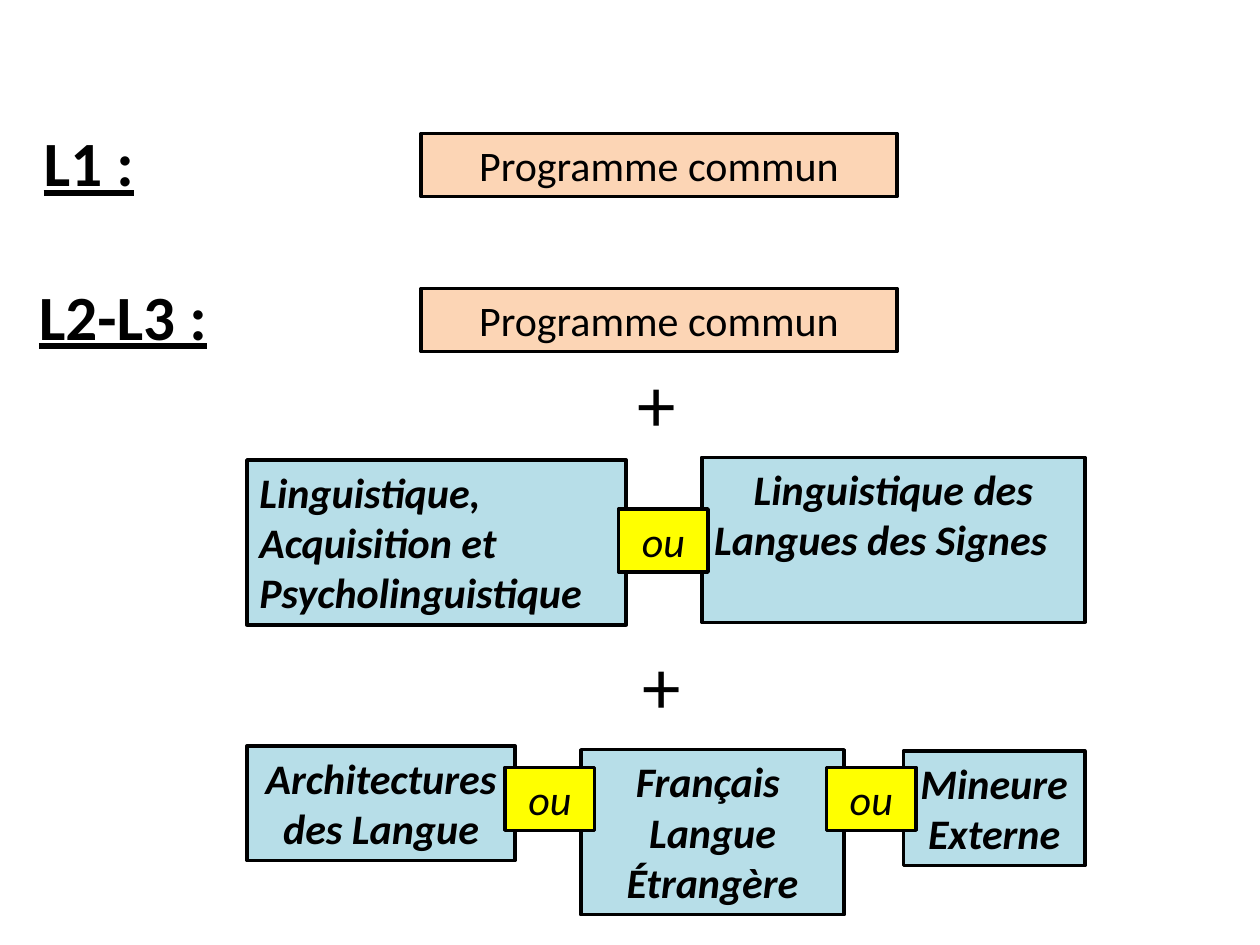
from pptx import Presentation
from pptx.dml.color import RGBColor
from pptx.enum.shapes import MSO_SHAPE as Shape
from pptx.enum.text import MSO_ANCHOR as Anchor, MSO_AUTO_SIZE as AutoSize, PP_ALIGN as Align
from pptx.util import Inches, Pt

PEACH, BLUE, YELLOW, WHITE, BLACK = "FCD5B5", "B7DEE8", "FFFF00", "FFFFFF", "000000"


def colour(value):
    return RGBColor.from_string(value)


class Diagram:
    font = "Calibri"
    body_size = 24
    plus_size = 44
    label_size = 36
    line_width = 2

    def __init__(self, slide):
        self.slide = slide

    def set_text(self, shape, text, size, align=Align.CENTER, bold=False, italic=False, underline=False):
        frame = shape.text_frame
        frame.word_wrap = True
        frame.auto_size = AutoSize.SHAPE_TO_FIT_TEXT
        frame.vertical_anchor = Anchor.TOP
        frame.text = text
        for para in frame.paragraphs:
            para.alignment = align
            for span in para.runs:
                font = span.font
                font.name, font.size = self.font, Pt(size)
                font.bold, font.italic, font.underline = bold, italic, underline
                font.color.rgb = colour(BLACK)

    def block(self, left, top, width, height, fill, outlined=True):
        box = self.slide.shapes.add_shape(
            Shape.RECTANGLE, Inches(left), Inches(top), Inches(width), Inches(height))
        box.shadow.inherit = False
        box.fill.solid()
        box.fill.fore_color.rgb = colour(fill)
        if outlined:
            box.line.color.rgb = colour(BLACK)
            box.line.width = Pt(self.line_width)
        else:
            box.line.fill.background()
        return box

    def common(self, top):
        """Box for the programme shared by all students."""
        self.set_text(self.block(3.34, top, 3.78, 0.5, PEACH), "Programme commun", self.body_size)

    def course(self, left, top, width, height, text, align=Align.CENTER):
        self.set_text(self.block(left, top, width, height, BLUE), text, self.body_size,
                      align, bold=True, italic=True)

    def choice(self, left, top):
        """Yellow "ou" tag between two courses."""
        self.set_text(self.block(left, top, 0.71, 0.5, YELLOW), "ou", self.body_size, italic=True)

    def plus(self, left, top):
        self.set_text(self.block(left, top, 0.71, 0.84, WHITE, outlined=False), "+", self.plus_size)

    def level(self, left, top, width, text):
        """Underlined year label in the left margin."""
        box = self.slide.shapes.add_textbox(
            Inches(left), Inches(top), Inches(width), Inches(0.71))
        self.set_text(box, text, self.label_size, bold=True, underline=True)


def main():
    deck = Presentation()
    deck.slide_width, deck.slide_height = Inches(10), Inches(7.5)
    page = Diagram(deck.slides.add_slide(deck.slide_layouts[6]))

    page.level(0.17, 0.93, 1.07, "L1 :")
    page.common(1.06)

    page.level(0.18, 2.15, 1.59, "L2-L3 :")
    page.plus(4.86, 2.77)
    page.common(2.29)

    page.course(5.57, 3.63, 3.04, 1.31, "Linguistique des Langues des Signes\t")
    page.course(1.96, 3.65, 3.01, 1.31,
                "Linguistique, Acquisition et Psycholinguistique", Align.LEFT)
    page.choice(4.91, 4.04)

    page.plus(4.9, 5.01)
    page.course(1.96, 5.92, 2.13, 0.91, "Architectures des Langue")
    page.course(4.61, 5.95, 2.09, 1.31, "Français \nLangue Étrangère")
    page.course(7.17, 5.96, 1.44, 0.91, "Mineure Externe")
    for left in (4.01, 6.56):
        page.choice(left, 6.09)

    deck.save("out.pptx")


if __name__ == "__main__":
    main()
